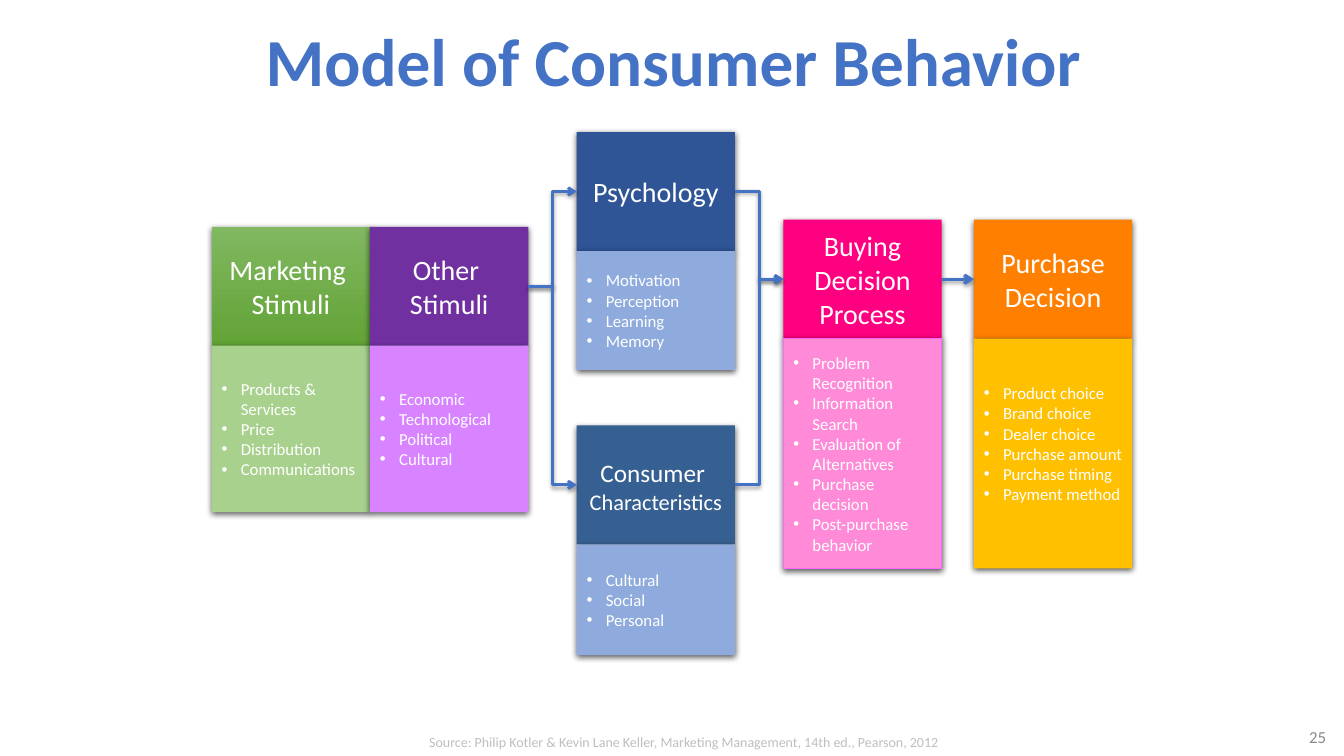
"""Build the Model of Consumer Behavior slide."""
from lxml import etree
from pptx import Presentation
from pptx import util as u
from pptx.dml.color import RGBColor
from pptx.enum import shapes, text
from pptx.oxml import ns

TITLE = "Model of Consumer Behavior"
SOURCE = "Source: Philip Kotler & Kevin Lane Keller, Marketing Management, 14th ed., Pearson, 2012"
PAGE = "25"
BLUE, WHITE = "4472C4", "FFFFFF"
CARD_W, HEAD_H, LINE_H = 1.57, 1.18, 0.2

CARDS = [
    dict(name="marketing", at=(2.1, 2.25), body_h=1.65, fills=(("81B861", "62A336"), "A9D18E"),
         head=[[("Marketing \n", 20), ("Stimuli", 20)]],
         items=["Products & Services", "Price", "Distribution", "Communications"]),
    dict(name="other", at=(3.67, 2.25), body_h=1.65, fills=("7030A0", "D883FF"),
         head=[[("Other \n", 20), ("Stimuli", 20)]],
         items=["Economic", "Technological", "Political", "Cultural"]),
    dict(name="psychology", at=(5.72, 1.31), body_h=1.18, fills=("2F5597", "8FAADC"),
         head=[[("Psychology", 20)]],
         items=["Motivation", "Perception", "Learning", "Memory"]),
    dict(name="consumer", at=(5.72, 4.22), body_h=1.1, fills=("376092", "8FAADC"),
         head=[[("Consumer", 18), (" \n", 20), ("Characteristics", 16)]],
         items=["Cultural", "Social", "Personal"]),
    dict(name="process", at=(7.77, 2.18), body_h=2.28, fills=("FF0080", "FF8AD8"), border="FF66FF",
         head=[[("Buying", 20)], [("Decision Process", 20)]],
         items=["Problem Recognition", "Information Search", "Evaluation of Alternatives",
                "Purchase decision", "Post-purchase behavior"]),
    dict(name="purchase", at=(9.66, 2.18), body_h=2.28, fills=("FF8000", "FFC000"), lift=LINE_H,
         head=[[("Purchase", 20)], [("Decision", 20)]],
         items=["Product choice", "Brand choice", "Dealer choice", "Purchase amount",
                "Purchase timing", "Payment method"]),
]
ELBOW, STRAIGHT = shapes.MSO_CONNECTOR.ELBOW, shapes.MSO_CONNECTOR.STRAIGHT
FLOWS = [("other", "psychology", ELBOW, 2), ("other", "consumer", ELBOW, 2),
         ("psychology", "process", ELBOW, 2), ("consumer", "process", ELBOW, 2),
         ("process", "purchase", STRAIGHT, 2.25)]


def rgb(value):
    return RGBColor.from_string(value)


def sub(parent, tag, **attrs):
    return etree.SubElement(parent, ns.qn(tag), {k: str(v) for k, v in attrs.items()})


def add_shadow(shape, alpha, blur, dist):
    effects = sub(shape._element.spPr, "a:effectLst")
    outer = sub(effects, "a:outerShdw", blurRad=u.Pt(blur), dist=u.Pt(dist), dir=5400000,
                algn="ctr", rotWithShape=0)
    sub(sub(outer, "a:srgbClr", val="000000"), "a:alpha", val=alpha * 1000)


def write(tf, paragraphs, color, align, bullets=False, bold=False, anchor="MIDDLE"):
    tf.word_wrap = True
    tf.vertical_anchor = text.MSO_ANCHOR[anchor]
    for i, runs in enumerate(paragraphs):
        p = tf.add_paragraph() if i else tf.paragraphs[0]
        p.alignment = text.PP_ALIGN[align]
        if bullets:
            pPr = p._p.get_or_add_pPr()
            pPr.set("marL", str(u.Inches(0.19)))
            pPr.set("indent", str(u.Inches(-0.19)))
            sub(pPr, "a:buFont", typeface="Arial")
            sub(pPr, "a:buChar", char="•")
        for words, size in runs:
            r = p.add_run()
            r.text = words.rstrip("\n")
            for key, value in dict(name="Calibri", size=u.Pt(size), bold=bold).items():
                setattr(r.font, key, value)
            r.font.color.rgb = rgb(color)
            if words.endswith("\n"):
                p.add_line_break()


def add_box(s, at, fill, border=None):
    sp = s.shapes.add_shape(shapes.MSO_SHAPE.RECTANGLE, *map(u.Inches, at))
    if isinstance(fill, tuple):
        sp.fill.gradient()
        sp.fill.gradient_angle = 270
        for stop, color in zip(sp.fill.gradient_stops, fill):
            stop.color.rgb = rgb(color)
    else:
        sp.fill.solid()
        sp.fill.fore_color.rgb = rgb(fill)
    if border:
        sp.line.color.rgb = rgb(border)
        sp.line.width = u.Pt(0.75)
    else:
        sp.line.fill.background()
    add_shadow(sp, 63, 4.5, 1.5)
    return sp


def add_card(s, card):
    x, y = card["at"]
    head_fill, body_fill = card["fills"]
    head = add_box(s, (x, y, CARD_W, HEAD_H), head_fill)
    write(head.text_frame, card["head"], WHITE, "CENTER")
    body = add_box(s, (x, y + HEAD_H, CARD_W, card["body_h"]), body_fill, card.get("border"))
    body.text_frame.margin_bottom = u.Inches(0.05 + card.get("lift", 0))
    write(body.text_frame, [[(item, 12)] for item in card["items"]], WHITE, "LEFT", bullets=True)
    return head


def add_flow(s, start, end, kind, width):
    line = s.shapes.add_connector(kind, start.left + start.width, start.top + start.height // 2,
                                  end.left, end.top + end.height // 2)
    line.begin_connect(start, 3)
    line.end_connect(end, 1)
    line.line.color.rgb = rgb(BLUE)
    line.line.width = u.Pt(width)
    sub(line.line._get_or_add_ln(), "a:tailEnd", type="arrow")
    add_shadow(line, 38, 3.1, 1.6)


def add_label(s, at, words, size, color, align, anchor):
    tf = s.shapes.add_textbox(*map(u.Inches, at)).text_frame
    write(tf, [[(words, size)]], color, align, anchor=anchor)


def main():
    prs = Presentation()
    prs.slide_width, prs.slide_height = u.Inches(13.33), u.Inches(7.5)
    s = prs.slides.add_slide(prs.slide_layouts[5])
    title = s.shapes.title
    for key, value in dict(left=2.18, top=0.13, width=9, height=0.93).items():
        setattr(title, key, u.Inches(value))
    write(title.text_frame, [[(TITLE, 48)]], BLUE, "CENTER", bold=True)
    heads = {card["name"]: add_card(s, card) for card in CARDS}
    for start, end, kind, width in FLOWS:
        add_flow(s, heads[start], heads[end], kind, width)
    add_label(s, (12.2, 7.18, 1.05, 0.26), PAGE, 12, "898989", "RIGHT", "MIDDLE")
    add_label(s, (3.52, 7.23, 6.52, 0.27), SOURCE, 10, "BFBFBF", "CENTER", "TOP")
    prs.save("out.pptx")


if __name__ == "__main__":
    main()
